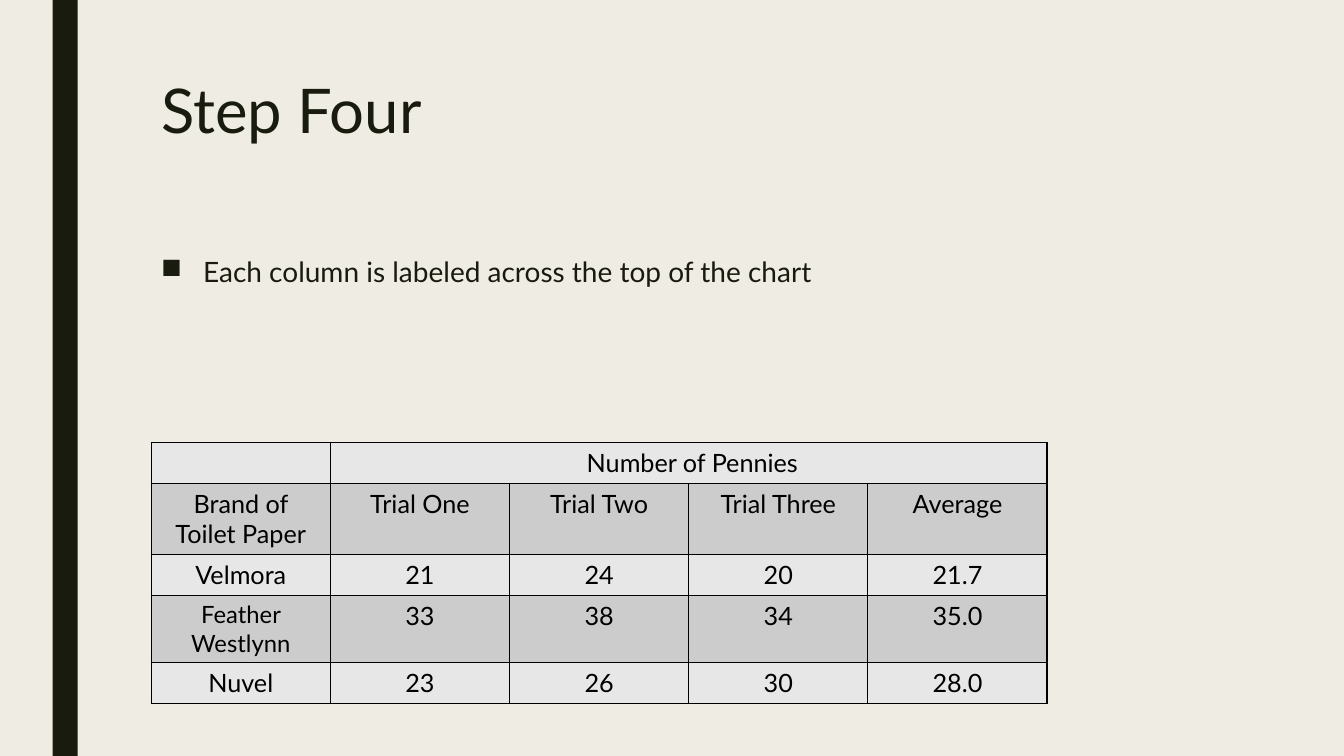
from lxml import etree
from pptx import Presentation
from pptx.dml.color import RGBColor
from pptx.enum.shapes import MSO_SHAPE
from pptx.enum.text import PP_ALIGN
from pptx.oxml.ns import qn
from pptx.util import Pt

COLORS = {"paper": "EFEDE3", "ink": "191B0E", "black": "000000",
          "light": "E7E7E7", "dark": "CCCCCC"}


def add_text(paragraph, text, size, color, align=PP_ALIGN.LEFT):
    paragraph.alignment = align
    run = paragraph.add_run()
    run.text = text
    run.font.name = "Lato"
    run.font.size = Pt(size)
    run.font.color.rgb = RGBColor.from_string(COLORS[color])


def add_box(left, top, width, height):
    frame = slide.shapes.add_textbox(Pt(left), Pt(top), Pt(width), Pt(height)).text_frame
    frame.word_wrap = True
    return frame.paragraphs[0]


deck = Presentation()
deck.slide_width, deck.slide_height = Pt(960), Pt(540)
slide = deck.slides.add_slide(deck.slide_layouts[6])
slide.background.fill.solid()
slide.background.fill.fore_color.rgb = RGBColor.from_string(COLORS["paper"])

stripe = slide.shapes.add_shape(MSO_SHAPE.RECTANGLE, Pt(37.5), 0, Pt(18), Pt(540))
stripe.shadow.inherit = False
stripe.fill.solid()
stripe.fill.fore_color.rgb = RGBColor.from_string(COLORS["ink"])
stripe.line.fill.background()

title = add_box(108, 54, 756, 116.64)
title.line_spacing = 0.89
add_text(title, "Step Four", 44, "ink")

step = add_box(108, 180, 756, 282)
step.line_spacing = 0.94
step.space_before, step.space_after = Pt(10), Pt(2)
add_text(step, "Each column is labeled across the top of the chart", 20, "ink")
step_props = step._p.get_or_add_pPr()
step_props.set("marL", str(Pt(30)))
step_props.set("indent", str(-Pt(30)))
etree.SubElement(step_props, qn("a:buChar")).set("char", "■")

results = [
    ["", "", "", "", ""],
    ["Brand of Toilet Paper", "Trial One", "Trial Two", "Trial Three", "Average"],
    ["Velmora", "21", "24", "20", "21.7"],
    ["Feather Westlynn", "33", "38", "34", "35.0"],
    ["Nuvel", "23", "26", "30", "28.0"],
]
row_heights = [29.3, 50.6, 29.3, 47.8, 29.3]
table = slide.shapes.add_table(5, 5, Pt(108), Pt(316), Pt(640), Pt(sum(row_heights))).table
for column in table.columns:
    column.width = Pt(128)

for r, (values, height) in enumerate(zip(results, row_heights)):
    table.rows[r].height = Pt(height)
    for c, value in enumerate(values):
        cell = table.cell(r, c)
        if value:
            size = 17 if value == "Feather Westlynn" else 18
            add_text(cell.text_frame.paragraphs[0], value, size, "black", PP_ALIGN.CENTER)
        cell_props = cell._tc.get_or_add_tcPr()
        for side in ("lnL", "lnR", "lnT", "lnB"):
            border = etree.SubElement(cell_props, qn(f"a:{side}"), w=str(Pt(1)))
            border_fill = etree.SubElement(border, qn("a:solidFill"))
            etree.SubElement(border_fill, qn("a:srgbClr"), val=COLORS["black"])
        cell.fill.solid()
        cell.fill.fore_color.rgb = RGBColor.from_string(COLORS["dark" if r % 2 else "light"])
table.cell(0, 1).merge(table.cell(0, 4))

pennies = add_box(375.8, 316, 237.6, 29)
add_text(pennies, "Number of Pennies", 18, "black", PP_ALIGN.CENTER)

deck.save("out.pptx")
